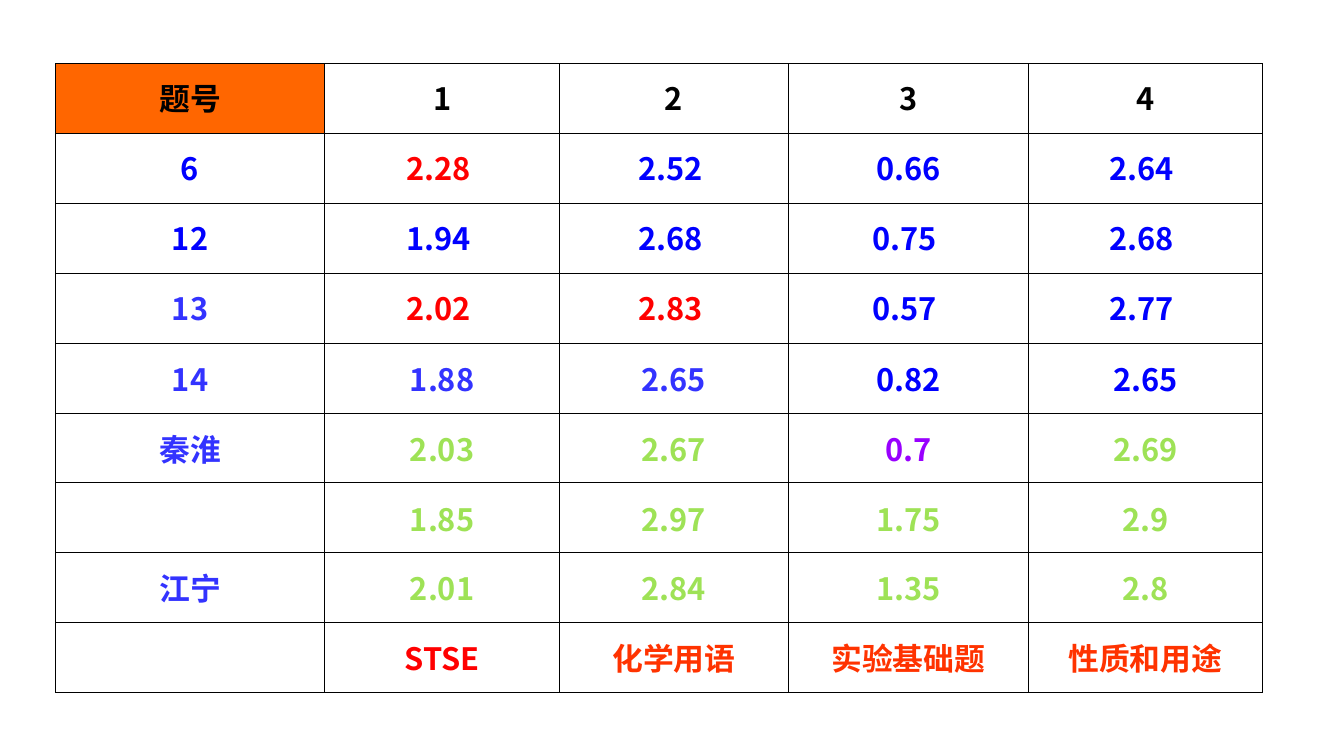
from dataclasses import dataclass

from lxml import etree
from pptx import Presentation, util as u
from pptx.dml.color import RGBColor
from pptx.enum import text
from pptx.oxml import ns


@dataclass(frozen=True)
class Theme:
    latin: str = "Calibri"
    east_asian: str = "Noto Sans CJK SC"
    size: int = 22
    header_fill: str = "FF6600"
    border: str = "000000"
    border_width: float = 0.5


THEME = Theme()

# One colour per letter; a pair is a gradient
INKS = {
    "K": ["000000"],
    "B": ["0000FF"],
    "V": ["3333FF"],
    "R": ["FF0000"],
    "P": ["9900FF"],
    "O": ["FF3300"],
    "G": ["9EE256", "52762D"],
}

# Cell texts of each row, with one ink letter per cell
SCORES = [
    (["题号", "1", "2", "3", "4"], "KKKKK"),
    (["6", "2.28 ", "2.52 ", "0.66", "2.64 "], "BRBBB"),
    (["12", "1.94 ", "2.68 ", "0.75 ", "2.68 "], "BBBBB"),
    (["13", "2.02 ", "2.83 ", "0.57 ", "2.77 "], "VRRBB"),
    (["14", "1.88", "2.65", "0.82", "2.65"], "VVVBB"),
    (["秦淮", "2.03", "2.67", "0.7", "2.69"], "VGGPG"),
    (["", "1.85", "2.97", "1.75", "2.9"], "VGGGG"),
    (["江宁", "2.01", "2.84", "1.35", "2.8"], "VGGGG"),
    (["", "STSE", "化学用语", "实验基础题", "性质和用途"], "VROOO"),
]
SPACED_ROWS = 4  # leading rows with tighter lines and space before
COLUMN_WIDTHS = [2.67, 2.33, 2.27, 2.38, 2.32]


def add_borders(cell):
    properties = cell._tc.get_or_add_tcPr()
    for side in ("lnL", "lnR", "lnT", "lnB"):
        line = etree.SubElement(properties, ns.qn(f"a:{side}"),
                                w=str(u.Pt(THEME.border_width)))
        fill = etree.SubElement(line, ns.qn("a:solidFill"))
        etree.SubElement(fill, ns.qn("a:srgbClr"), val=THEME.border)


def color_font(font, colors):
    if len(colors) == 1:
        font.color.rgb = RGBColor.from_string(colors[0])
        return
    font.fill.gradient()
    font.fill.gradient_angle = 0
    for stop, color in zip(font.fill.gradient_stops, colors):
        stop.color.rgb = RGBColor.from_string(color)


def write_text(cell, words, colors, latin, spaced=False):
    para = cell.text_frame.paragraphs[0]
    para.alignment = text.PP_ALIGN.CENTER
    if spaced:
        para.line_spacing = 0.9
        para.space_before = u.Pt(10)
    if not words:
        para.font.size = u.Pt(THEME.size)
        return
    span = para.add_run()
    span.text = words
    span.font.size = u.Pt(THEME.size)
    span.font.bold = True
    color_font(span.font, colors)
    span.font.name = latin
    etree.SubElement(span.font._element, ns.qn("a:ea"),
                     typeface=THEME.east_asian)


def add_score_table(page, left, top, width, height):
    frame = page.shapes.add_table(
        len(SCORES), len(COLUMN_WIDTHS), u.Inches(left), u.Inches(top),
        u.Inches(width), u.Inches(height))
    table = frame.table
    table.first_row = False
    table.horz_banding = False

    # Grid
    for column, share in zip(table.columns, COLUMN_WIDTHS):
        column.width = u.Inches(width * share / sum(COLUMN_WIDTHS))
    for row in table.rows:
        row.height = u.Inches(height / len(SCORES))

    # Cells
    for r, (words, inks) in enumerate(SCORES):
        for c, (word, ink) in enumerate(zip(words, inks)):
            cell = table.cell(r, c)
            cell.vertical_anchor = text.MSO_ANCHOR.MIDDLE
            add_borders(cell)
            is_corner = r == c == 0
            if is_corner:
                cell.fill.solid()
                cell.fill.fore_color.rgb = RGBColor.from_string(THEME.header_fill)
            else:
                cell.fill.background()
            write_text(cell, word, INKS[ink], spaced=r < SPACED_ROWS,
                       latin=THEME.latin if is_corner else THEME.east_asian)


def main():
    deck = Presentation()
    deck.slide_width = u.Inches(13.33)
    deck.slide_height = u.Inches(7.5)
    page = deck.slides.add_slide(deck.slide_layouts[6])
    add_score_table(page, 0.55, 0.63, 11.97, 6.24)
    deck.save("out.pptx")


if __name__ == "__main__":
    main()
